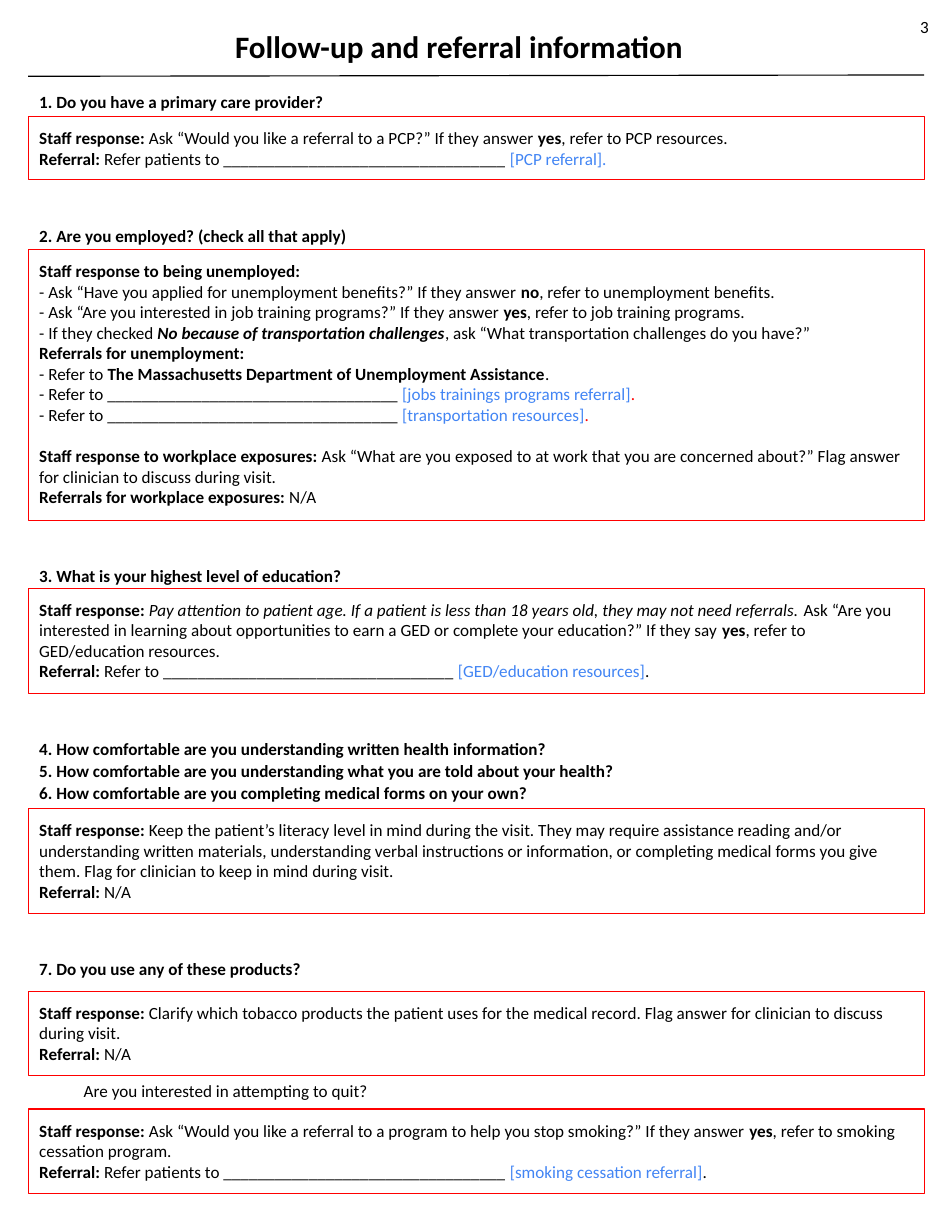
from pptx import Presentation
from pptx.dml.color import RGBColor
from pptx.enum.shapes import MSO_CONNECTOR, MSO_SHAPE
from pptx.enum.text import MSO_ANCHOR, MSO_AUTO_SIZE, PP_ALIGN
from pptx.oxml.ns import qn
from pptx.util import Cm, Pt

RECTANGLE = MSO_SHAPE.RECTANGLE
STRAIGHT = MSO_CONNECTOR.STRAIGHT
TOP = MSO_ANCHOR.TOP
GROW = MSO_AUTO_SIZE.SHAPE_TO_FIT_TEXT
LEFT = PP_ALIGN.LEFT

COLORS = {"black": "000000", "red": "FF0000", "blue": "4285F4"}
FONT = "Calibri"
BODY_SIZE = 11
MARGIN = 0.64
CONTENT_WIDTH = 20.32
INSET = 0.25
LINE_HEIGHT = 0.47
LABEL_HEIGHT = 0.98

TITLE = "Follow-up and referral information"
PAGE_NUMBER = "3"
BLANK = "_" * 33
LONG_BLANK = "_" * 34

SECTIONS = [
    {
        "questions": [(MARGIN, 1.85, 7.75, "1. Do you have a primary care provider?", "bold")],
        "answers": [(2.64, 2, [
            [("Staff response:", "bold"), (" Ask “Would you like a referral to a PCP?” If they answer ", ""),
             ("yes", "bold"), (", refer to PCP resources.", "")],
            [("Referral: ", "bold"), (f"Refer patients to {BLANK} ", ""), ("[PCP referral].", "blue")],
        ])],
    },
    {
        "questions": [(MARGIN, 4.88, 8.97, "2. Are you employed? (check all that apply)", "bold")],
        "answers": [(5.66, 12, [
            [("Staff response to being unemployed: ", "bold")],
            [("- Ask “Have you applied for unemployment benefits?” If they answer ", ""),
             ("no", "bold"), (", refer to unemployment benefits.", "")],
            [("- Ask “Are you interested in job training programs?” If they answer ", ""),
             ("yes", "bold"), (", refer to job training programs.", "")],
            [("- If they checked ", ""), ("No because of transportation challenges", "bold italic"),
             (", ask “What transportation challenges do you have?”", "")],
            [("Referrals for unemployment: ", "bold")],
            [("- Refer to ", ""), ("The Massachusetts Department of Unemployment Assistance", "bold"), (".", "")],
            [(f"- Refer to {LONG_BLANK} ", ""), ("[jobs trainings programs referral]", "blue"), (".", "red")],
            [(f"- Refer to {LONG_BLANK} ", ""), ("[transportation resources]", "blue"), (".", "red")],
            [("Staff response to workplace exposures: ", "bold gap"),
             ("Ask “What are you exposed to at work that you are concerned about?” "
              "Flag answer for clinician to discuss during visit.", "")],
            [("Referrals for workplace exposures: ", "bold"), ("N/A", "")],
        ])],
    },
    {
        "questions": [(MARGIN, 12.6, 8.38, "3. What is your highest level of education?", "bold")],
        "answers": [(13.34, 4, [
            [("Staff response: ", "bold"),
             ("Pay attention to patient age. If a patient is less than 18 years old, "
              "they may not need referrals. ", "italic"),
             ("Ask “Are you interested in learning about opportunities to earn a GED "
              "or complete your education?” If they say ", ""),
             ("yes", "bold"), (", refer to GED/education resources.", "")],
            [("Referral: ", "bold"), (f"Refer to {LONG_BLANK} ", ""),
             ("[GED/education resources]", "blue"), (".", "")],
        ])],
    },
    {
        "questions": [
            (MARGIN, 16.51, 13.79, "4. How comfortable are you understanding written health information?", "bold"),
            (MARGIN, 17.01, 15.9, "5. How comfortable are you understanding what you are told about your health?", "bold"),
            (MARGIN, 17.51, 13.31, "6. How comfortable are you completing medical forms on your own?", "bold"),
        ],
        "answers": [(18.34, 4, [
            [("Staff response:", "bold"),
             (" Keep the patient’s literacy level in mind during the visit. They may require assistance "
              "reading and/or understanding written materials, understanding verbal instructions or "
              "information, or completing medical forms you give them. Flag for clinician to keep in "
              "mind during visit.", "")],
            [("Referral: ", "bold"), ("N/A", "")],
        ])],
    },
    {
        "questions": [
            (MARGIN, 21.51, 19.1, "7. Do you use any of these products?", "bold"),
            (1.65, 24.28, 7.37, "Are you interested in attempting to quit?", ""),
        ],
        "answers": [
            (22.48, 3, [
                [("Staff response:", "bold"),
                 (" Clarify which tobacco products the patient uses for the medical record. "
                  "Flag answer for clinician to discuss during visit.", "")],
                [("Referral: ", "bold"), ("N/A", "")],
            ]),
            (25.15, 3, [
                [("Staff response:", "bold"),
                 (" Ask “Would you like a referral to a program to help you stop smoking?” If they answer ", ""),
                 ("yes", "bold"), (", refer to smoking cessation program.", "")],
                [("Referral: ", "bold"), (f"Refer patients to {BLANK} ", ""),
                 ("[smoking cessation referral]", "blue"), (".", "")],
            ]),
        ],
    },
]


def color(name):
    return RGBColor.from_string(COLORS[name])


def write(box, paragraphs, size=BODY_SIZE):
    frame = box.text_frame
    frame.word_wrap = True
    frame.auto_size = GROW
    frame.vertical_anchor = TOP
    frame.margin_left = frame.margin_right = frame.margin_top = frame.margin_bottom = Cm(INSET)
    for index, spans in enumerate(paragraphs):
        para = frame.add_paragraph() if index else frame.paragraphs[0]
        para.alignment = LEFT
        para.space_before = Cm(LINE_HEIGHT) if "gap" in spans[0][1] else Pt(0)
        for text, style in spans:
            words = style.split()
            span = para.add_run()
            span.text = text
            span.font.name = FONT
            span.font.size = Pt(size)
            span.font.bold = "bold" in words
            span.font.italic = "italic" in words
            span.font.color.rgb = color(next((word for word in words if word in COLORS), "black"))


def add_label(shapes, left, top, width, text, style):
    box = shapes.add_textbox(Cm(left), Cm(top), Cm(width), Cm(LABEL_HEIGHT))
    write(box, [[(text, style)]])


def add_answer(shapes, top, lines, paragraphs):
    height = 2 * INSET + lines * LINE_HEIGHT
    box = shapes.add_shape(RECTANGLE, Cm(MARGIN), Cm(top), Cm(CONTENT_WIDTH), Cm(height))
    box.shadow.inherit = False
    box.fill.background()
    box.line.color.rgb = color("red")
    box.line.width = Pt(0.75)
    write(box, paragraphs)


deck = Presentation()
deck.slide_width, deck.slide_height = Cm(21.59), Cm(27.94)
page = deck.slides.add_slide(deck.slide_layouts[5])

title = page.shapes.title
title.left, title.top, title.width, title.height = Cm(5.08), Cm(0.36), Cm(11.81), Cm(1.37)
write(title, [[(TITLE, "bold")]], 20)

rule = page.shapes.add_connector(STRAIGHT, Cm(MARGIN), Cm(1.73), Cm(MARGIN + CONTENT_WIDTH), Cm(1.7))
rule.line.color.rgb = color("black")
rule.line.width = Pt(0.75)
properties = rule.element.spPr
properties.append(properties.makeelement(qn("a:effectLst"), {}))

add_label(page.shapes, 20.62, 0.15, 0.7, PAGE_NUMBER, "")

for section in SECTIONS:
    group = page.shapes.add_group_shape()
    for answer in section["answers"]:
        add_answer(group.shapes, *answer)
    for question in section["questions"]:
        add_label(group.shapes, *question)

deck.save("out.pptx")
